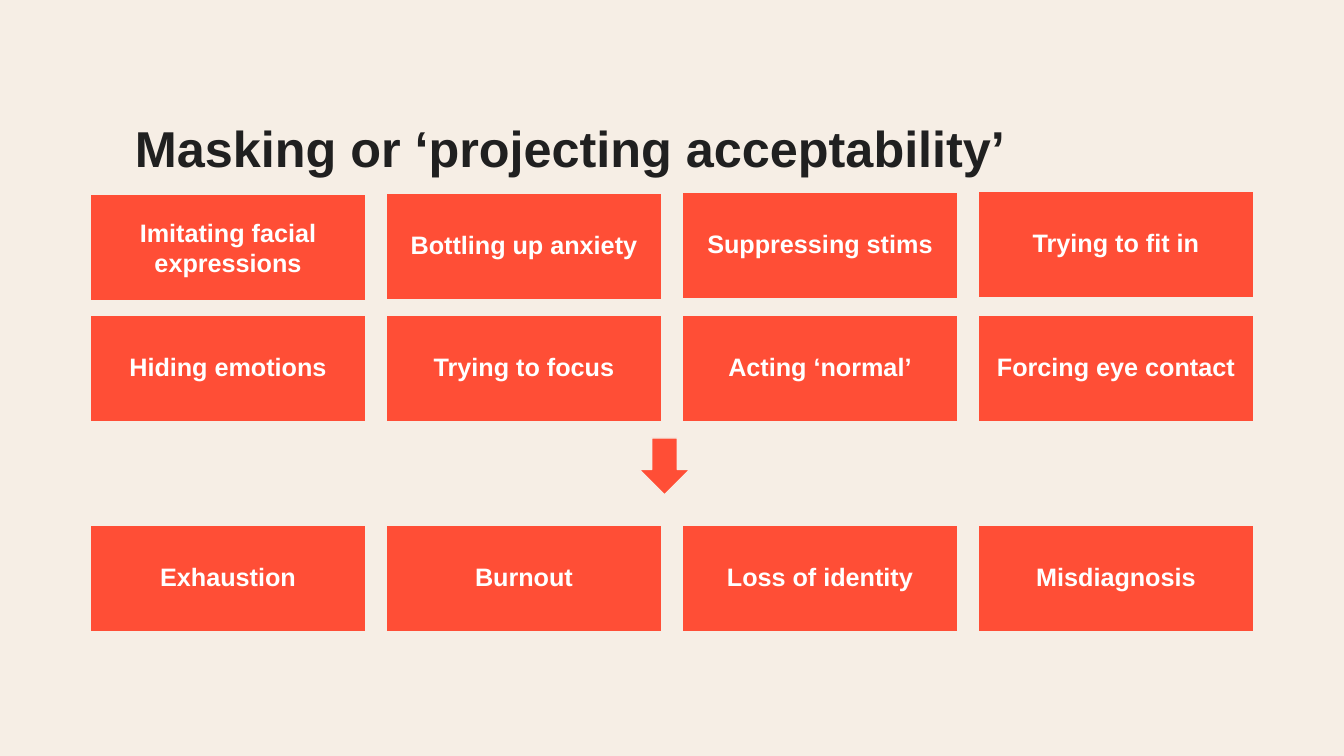
import pptx
import pptx.util
import pptx.dml.color
import pptx.enum.shapes
import pptx.enum.text
from dataclasses import dataclass

# Content
TITLE = "Masking or ‘projecting acceptability’"
BEHAVIOURS = ["Imitating facial expressions", "Bottling up anxiety",
              "Suppressing stims", "Trying to fit in"]
MORE_BEHAVIOURS = ["Hiding emotions", "Trying to focus",
                   "Acting ‘normal’", "Forcing eye contact"]
OUTCOMES = ["Exhaustion", "Burnout", "Loss of identity", "Misdiagnosis"]

# Each row: labels, top of its first box, rise per column
BEHAVIOUR_ROWS = [(BEHAVIOURS, 194, 1), (MORE_BEHAVIOURS, 315, 0)]
OUTCOME_ROW = (OUTCOMES, 525, 0)

# Layout in px
SLIDE_W, SLIDE_H = 1344, 756
TITLE_AREA = (128, 114, 1164, 53)
TITLE_INSETS = (7, 10, 7, 5)
ARROW_AREA = (639, 438, 51, 57)
BOX_LEFT, BOX_PITCH, BOX_W, BOX_H = 90, 296, 276, 107
BOX_INSETS = (16, 16, 16, 16)
FIRST_BOX_INSETS = (10, 5, 10, 5)
PX_PER_INCH = 100.8


@dataclass(frozen=True)
class Theme:
    background: str = "F6EEE5"
    accent: str = "FF4E36"
    dark: str = "202020"
    light: str = "FFFFFF"
    font: str = "Arial"
    title_size: int = 36
    box_size: int = 18


THEME = Theme()
SHAPES = pptx.enum.shapes.MSO_SHAPE
ALIGN = pptx.enum.text.PP_ALIGN
ANCHOR = pptx.enum.text.MSO_ANCHOR


def px(length):
    return pptx.util.Inches(length / PX_PER_INCH)


def rgb(value):
    return pptx.dml.color.RGBColor.from_string(value)


def write(shape, text, size, colour, insets, anchor, align, spacing=0.9):
    frame = shape.text_frame
    frame.word_wrap = True
    frame.vertical_anchor = anchor
    (frame.margin_left, frame.margin_top,
     frame.margin_right, frame.margin_bottom) = map(px, insets)
    paragraph = frame.paragraphs[0]
    paragraph.alignment = align
    paragraph.line_spacing = spacing
    run = paragraph.add_run()
    run.text = text
    run.font.name = THEME.font
    run.font.size = pptx.util.Pt(size)
    run.font.bold = True
    run.font.color.rgb = rgb(colour)
    return paragraph


def add_block(slide, kind, area):
    block = slide.shapes.add_shape(kind, *map(px, area))
    block.shadow.inherit = False
    block.fill.solid()
    block.fill.fore_color.rgb = rgb(THEME.accent)
    block.line.color.rgb = rgb(THEME.background)
    block.line.width = pptx.util.Pt(1)
    return block


def add_row(slide, labels, top, rise):
    for column, label in enumerate(labels):
        area = (BOX_LEFT + column * BOX_PITCH, top - column * rise, BOX_W, BOX_H)
        box = add_block(slide, SHAPES.RECTANGLE, area)
        opening = label == BEHAVIOURS[0]
        paragraph = write(box, label, THEME.box_size, THEME.light,
                          FIRST_BOX_INSETS if opening else BOX_INSETS,
                          ANCHOR.MIDDLE, ALIGN.CENTER, 1.0 if opening else 0.9)
        if not opening:
            paragraph.space_after = pptx.util.Pt(6.3)


def main():
    deck = pptx.Presentation()
    deck.slide_width, deck.slide_height = px(SLIDE_W), px(SLIDE_H)
    slide = deck.slides.add_slide(deck.slide_layouts[6])
    slide.background.fill.solid()
    slide.background.fill.fore_color.rgb = rgb(THEME.background)

    # Title
    title = slide.shapes.add_textbox(*map(px, TITLE_AREA))
    write(title, TITLE, THEME.title_size, THEME.dark, TITLE_INSETS,
          ANCHOR.TOP, ALIGN.LEFT)

    # Masking behaviours, leading down to their outcomes
    for row in BEHAVIOUR_ROWS:
        add_row(slide, *row)
    add_block(slide, SHAPES.DOWN_ARROW, ARROW_AREA)
    add_row(slide, *OUTCOME_ROW)

    deck.save("out.pptx")


if __name__ == "__main__":
    main()
